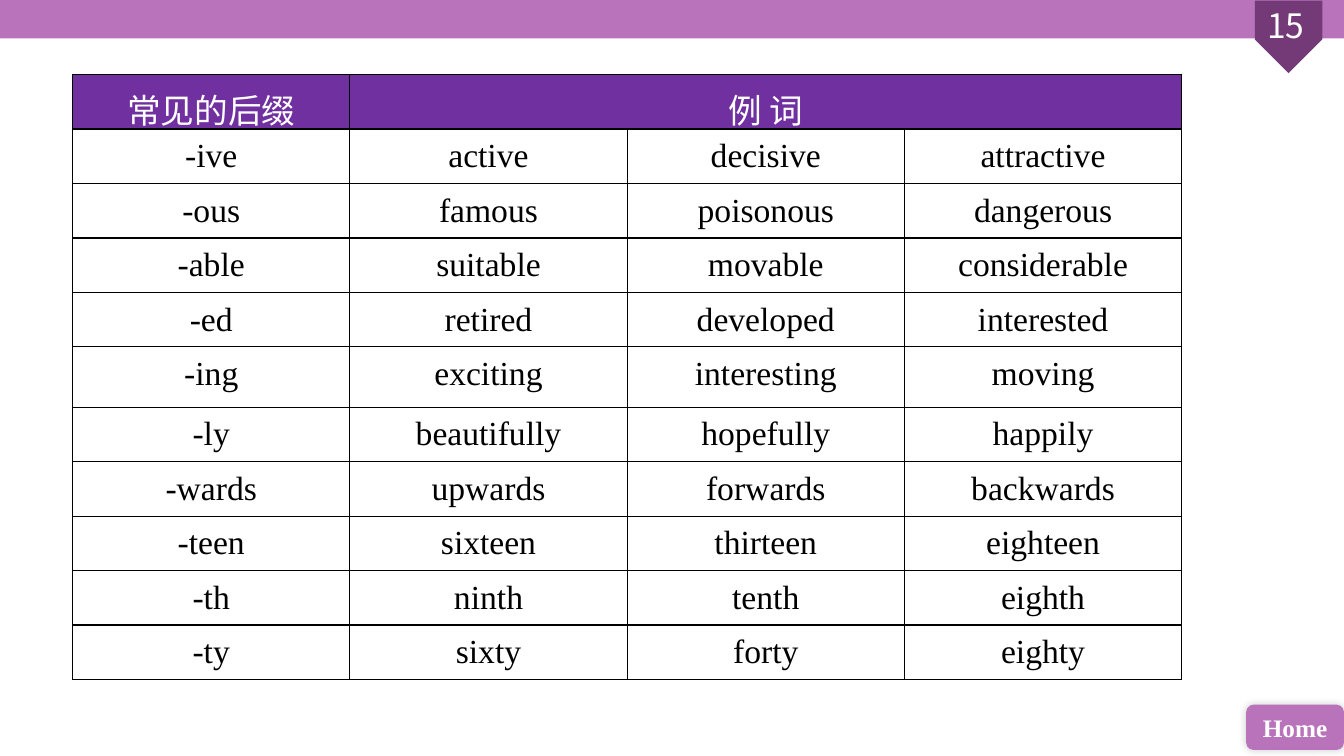
from lxml import etree
from pptx import Presentation
from pptx.dml.color import RGBColor
from pptx.enum.shapes import MSO_SHAPE
from pptx.enum.text import MSO_ANCHOR, PP_ALIGN
from pptx.oxml import parse_xml
from pptx.oxml.ns import nsdecls, qn
from pptx.util import Inches, Pt

RECT = MSO_SHAPE.RECTANGLE
ROUND_RECT = MSO_SHAPE.ROUNDED_RECTANGLE
PENTAGON = MSO_SHAPE.PENTAGON
MIDDLE = MSO_ANCHOR.MIDDLE
CENTER = PP_ALIGN.CENTER

ORCHID = RGBColor(0xB8, 0x73, 0xBB)
PLUM = RGBColor(0x74, 0x3A, 0x78)
PURPLE = RGBColor(0x70, 0x30, 0xA0)
WHITE = RGBColor(0xFF, 0xFF, 0xFF)
BLACK = RGBColor(0x00, 0x00, 0x00)

SERIF = "Times New Roman"
SANS = "Noto Sans CJK SC"

HEADER = ["常见的后缀", "例 词", "", ""]
SUFFIXES = [
    ["-ive", "active", "decisive", "attractive"],
    ["-ous", "famous", "poisonous", "dangerous"],
    ["-able", "suitable", "movable", "considerable"],
    ["-ed", "retired", "developed", "interested"],
    ["-ing", "exciting", "interesting", "moving"],
    ["-ly", "beautifully", "hopefully", "happily"],
    ["-wards", "upwards", "forwards", "backwards"],
    ["-teen", "sixteen", "thirteen", "eighteen"],
    ["-th", "ninth", "tenth", "eighth"],
    ["-ty", "sixty", "forty", "eighty"],
]
COL_WIDTH = 2.75
ROW_HEIGHT = 0.54
TALL_ROW, TALL_HEIGHT = 5, 0.6


def add_block(slide, kind, left, top, width, height, color):
    """Add a filled shape without outline or shadow."""
    sp = slide.shapes.add_shape(
        kind, Inches(left), Inches(top), Inches(width), Inches(height))
    sp.shadow.inherit = False
    sp.fill.solid()
    sp.fill.fore_color.rgb = color
    sp.line.fill.background()
    return sp


def style_paragraph(p, size, font, color):
    """Centre a paragraph and set its font."""
    p.alignment = CENTER
    p.font.size = Pt(size)
    p.font.name = font
    p.font.color.rgb = color


def add_page_number(slide, number):
    """Add the page number with its pointed tag."""
    tag = add_block(slide, PENTAGON, 12.42, 0.03, 0.72, 0.67, PLUM)
    tag.rotation = 90
    box = slide.shapes.add_textbox(
        Inches(12.29), Inches(0), Inches(0.98), Inches(0.5))
    tf = box.text_frame
    tf.word_wrap = True
    p = tf.paragraphs[0]
    style_paragraph(p, 24, SANS, WHITE)
    p.add_run().text = number
    r = p.add_run()
    r.text = " "
    r.font.size = Pt(18)


def add_home_button(slide):
    """Add the rounded button with a soft shadow."""
    sp = add_block(slide, ROUND_RECT, 12.36, 6.99, 0.97, 0.45, ORCHID)
    effects = sp._element.spPr.find(qn("a:effectLst"))
    effects.append(parse_xml(
        f'<a:outerShdw {nsdecls("a")} blurRad="{Pt(6)}" dist="0" dir="18900000">'
        '<a:srgbClr val="000000"><a:alpha val="20000"/></a:srgbClr></a:outerShdw>'))
    tf = sp.text_frame
    tf.vertical_anchor = MIDDLE
    p = tf.paragraphs[0]
    p.text = "Home"
    style_paragraph(p, 18, SERIF, WHITE)
    p.font.bold = True


def set_borders(cell):
    """Draw a thin black line on all four sides of a cell."""
    tc_pr = cell._tc.get_or_add_tcPr()
    for i, side in enumerate(("lnL", "lnR", "lnT", "lnB")):
        ln = etree.Element(qn(f"a:{side}"), w=str(Pt(1)))
        fill = etree.SubElement(ln, qn("a:solidFill"))
        etree.SubElement(fill, qn("a:srgbClr"), val=str(BLACK))
        tc_pr.insert(i, ln)


def fill_cell(cell, text, is_header):
    """Write and format one table cell."""
    if is_header:
        cell.fill.solid()
        cell.fill.fore_color.rgb = PURPLE
        cell.margin_bottom = Inches(0)
    else:
        cell.fill.background()
    set_borders(cell)
    p = cell.text_frame.paragraphs[0]
    p.text = text
    p.line_spacing = 1.1
    style_paragraph(p, 24, SERIF, WHITE if is_header else BLACK)


def add_suffix_table(slide):
    """Add the table of suffixes and example words."""
    rows = [HEADER] + SUFFIXES
    table = slide.shapes.add_table(
        len(rows), len(HEADER), Inches(0.72), Inches(0.74),
        Inches(COL_WIDTH * len(HEADER)), Inches(6)).table
    table.first_row = False
    table.horz_banding = False
    for col in table.columns:
        col.width = Inches(COL_WIDTH)
    for i, words in enumerate(rows):
        table.rows[i].height = Inches(TALL_HEIGHT if i == TALL_ROW else ROW_HEIGHT)
        for j, word in enumerate(words):
            fill_cell(table.cell(i, j), word, i == 0)
    table.cell(0, 1).merge(table.cell(0, 3))


def main():
    """Build the slide and save it."""
    prs = Presentation()
    prs.slide_width = Inches(13.33)
    prs.slide_height = Inches(7.5)
    slide = prs.slides.add_slide(prs.slide_layouts[6])
    add_block(slide, RECT, 0, 0, 13.33, 0.38, ORCHID)
    add_page_number(slide, "15")
    add_home_button(slide)
    add_suffix_table(slide)
    prs.save("out.pptx")


if __name__ == "__main__":
    main()
